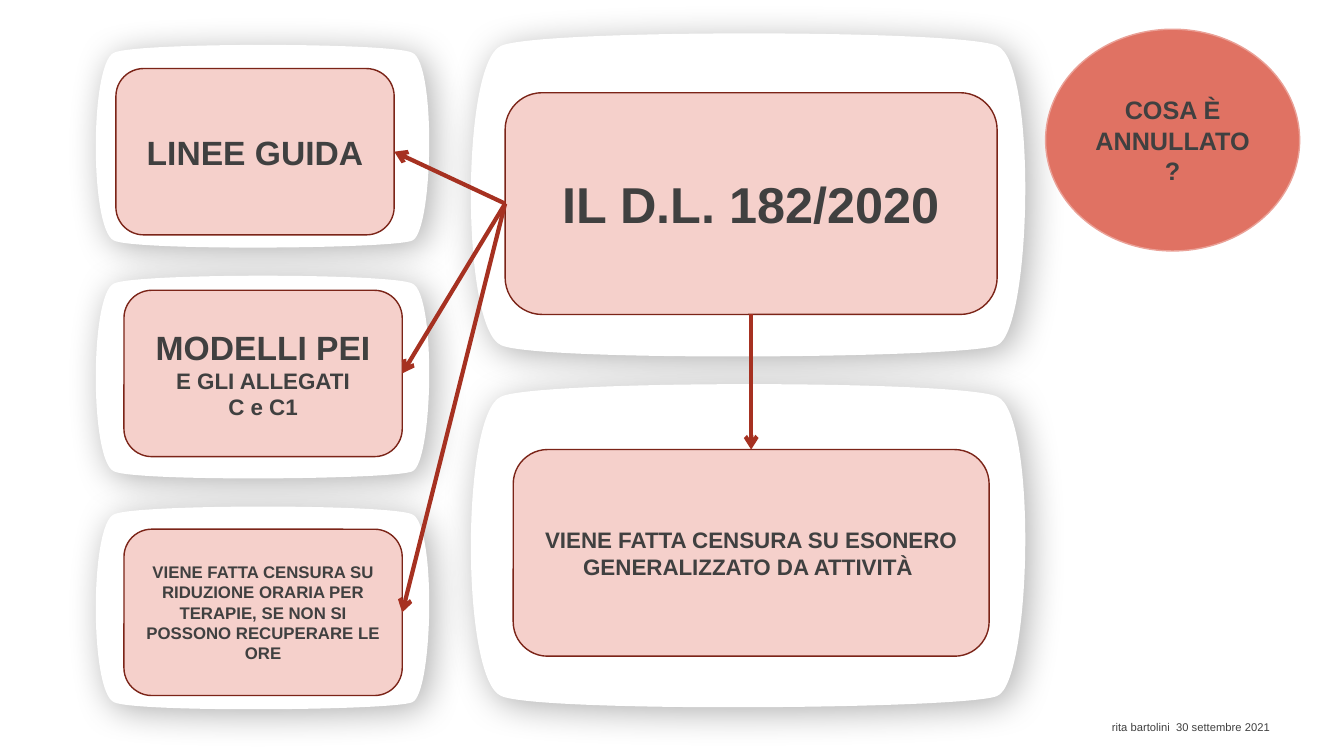
from lxml.etree import SubElement
from pptx import Presentation
from pptx.dml.color import RGBColor
from pptx.enum.shapes import MSO_CONNECTOR, MSO_SHAPE
from pptx.enum.text import MSO_ANCHOR, PP_ALIGN
from pptx.oxml.ns import qn
from pptx.util import Inches, Pt

COLORS = {
    "frame": "FFFFFF",
    "shadow": "000000",
    "card": "F5D0CB",
    "card_edge": "7B2418",
    "question": "E07263",
    "question_edge": "EAA197",
    "arrow": "A63121",
    "text": "404040",
}

# Bulging frame outline as fractions of its box: start, then cubic segments
FRAME_START = (0.93, 0.05)
FRAME_CURVES = [
    ((1.0, 0.1), (0.99, 0.91), (0.93, 0.95)),
    ((0.88, 0.99), (0.13, 1.0), (0.07, 0.95)),
    ((0.0, 0.9), (0.0, 0.1), (0.07, 0.05)),
    ((0.13, 0.0), (0.87, 0.0), (0.93, 0.05)),
]

SMALL_FRAME_TOPS = [0.42 + 2.29 * row for row in range(3)]
FRAMES = [(4.57, 0.29, 5.72, 3.3), (4.57, 3.77, 5.72, 3.3)] + [
    (0.89, top, 3.44, 2.07) for top in SMALL_FRAME_TOPS
]

# Connection sites of a rounded rectangle
TOP, LEFT, BOTTOM, RIGHT = range(4)


def rgb(name):
    return RGBColor.from_string(COLORS[name])


def bend_segments(freeform):
    """Merge each three straight segments into one cubic curve."""
    outline = next(freeform._element.iter(qn("a:path")))
    segments = outline.findall(qn("a:lnTo"))
    for index in range(0, 3 * len(FRAME_CURVES), 3):
        curve = SubElement(outline, qn("a:cubicBezTo"))
        segments[index].addprevious(curve)
        for segment in segments[index:index + 3]:
            curve.append(segment[0])
            outline.remove(segment)


def add_soft_shadow(shape):
    effects = SubElement(shape._element.spPr, qn("a:effectLst"))
    shadow = SubElement(effects, qn("a:outerShdw"), blurRad=str(Pt(25)),
                        dist=str(Pt(5)), dir=str(45 * 60000),
                        algn="tl", rotWithShape="0")
    color = SubElement(shadow, qn("a:srgbClr"), val=COLORS["shadow"])
    SubElement(color, qn("a:alpha"), val="30000")


def add_frame(slide, box):
    left, top, width, height = box
    fractions = [FRAME_START] + [point for curve in FRAME_CURVES for point in curve]
    outline = [(Inches(left + x * width), Inches(top + y * height))
               for x, y in fractions]
    builder = slide.shapes.build_freeform(*outline[0])
    builder.add_line_segments(outline[1:], close=True)
    frame = builder.convert_to_shape()
    bend_segments(frame)
    frame.fill.solid()
    frame.fill.fore_color.rgb = rgb("frame")
    frame.line.fill.background()
    add_soft_shadow(frame)


def write_lines(text_frame, lines, bold=True, align=PP_ALIGN.CENTER):
    """Write (text, size) pairs, one paragraph each."""
    text_frame.word_wrap = True
    for index, (text, size) in enumerate(lines):
        paragraph = text_frame.paragraphs[0] if index == 0 else text_frame.add_paragraph()
        paragraph.alignment = align
        run = paragraph.add_run()
        run.text = text
        font_format = {"name": "Arial", "size": Pt(size), "bold": bold}
        for attribute, value in font_format.items():
            setattr(run.font, attribute, value)
        run.font.color.rgb = rgb("text")


def add_label(slide, outline, box, fill, edge, lines):
    """Add a filled preset shape with centred bold text."""
    label = slide.shapes.add_shape(outline, *map(Inches, box))
    label.fill.solid()
    label.fill.fore_color.rgb = rgb(fill)
    label.line.color.rgb = rgb(edge)
    label.line.width = Pt(1)
    label.shadow.inherit = False
    label.text_frame.vertical_anchor = MSO_ANCHOR.MIDDLE
    write_lines(label.text_frame, lines)
    return label


def add_card(slide, box, lines):
    return add_label(slide, MSO_SHAPE.ROUNDED_RECTANGLE, box,
                     "card", "card_edge", lines)


def add_question(slide, box):
    add_label(slide, MSO_SHAPE.OVAL, box, "question", "question_edge",
              [("COSA È ANNULLATO?", 18)])


def add_arrow(slide, source, source_site, target, target_site):
    arrow = slide.shapes.add_connector(MSO_CONNECTOR.STRAIGHT, 0, 0, 0, 0)
    arrow.begin_connect(source, source_site)
    arrow.end_connect(target, target_site)
    arrow.line.color.rgb = rgb("arrow")
    arrow.line.width = Pt(3)
    SubElement(arrow.line._get_or_add_ln(), qn("a:tailEnd"), type="arrow")
    SubElement(arrow._element.spPr, qn("a:effectLst"))


def add_signature(slide, box):
    signature = slide.shapes.add_textbox(*map(Inches, box))
    write_lines(signature.text_frame, [("rita bartolini  30 settembre 2021", 8)],
                bold=False, align=PP_ALIGN.LEFT)


def build_decree_slide(slide):
    for box in FRAMES:
        add_frame(slide, box)

    decree = add_card(slide, (5.01, 0.92, 4.88, 2.2), [("IL D.L. 182/2020", 36)])
    add_question(slide, (10.37, 0.29, 2.52, 2.2))
    guidelines = add_card(slide, (1.15, 0.68, 2.76, 1.65), [("LINEE GUIDA", 24)])
    models = add_card(slide, (1.23, 2.88, 2.76, 1.65), [
        ("MODELLI PEI", 24), ("E GLI ALLEGATI", 16), ("C e C1", 16),
    ])
    reduced_hours = add_card(slide, (1.23, 5.25, 2.76, 1.65), [
        ("VIENE FATTA CENSURA SU RIDUZIONE ORARIA PER TERAPIE, "
         "SE NON SI POSSONO RECUPERARE LE ORE", 12),
    ])
    exemption = add_card(slide, (5.09, 4.46, 4.72, 2.05), [
        ("VIENE FATTA CENSURA SU ESONERO GENERALIZZATO DA ATTIVITÀ ", 16),
    ])

    add_arrow(slide, decree, BOTTOM, exemption, TOP)
    for annulled in (guidelines, models, reduced_hours):
        add_arrow(slide, decree, LEFT, annulled, RIGHT)
    add_signature(slide, (10.93, 7.1, 2.4, 0.4))


def main():
    deck = Presentation()
    deck.slide_width, deck.slide_height = Inches(13.33), Inches(7.5)
    blank = deck.slide_layouts[6]
    build_decree_slide(deck.slides.add_slide(blank))
    deck.save("out.pptx")


if __name__ == "__main__":
    main()
